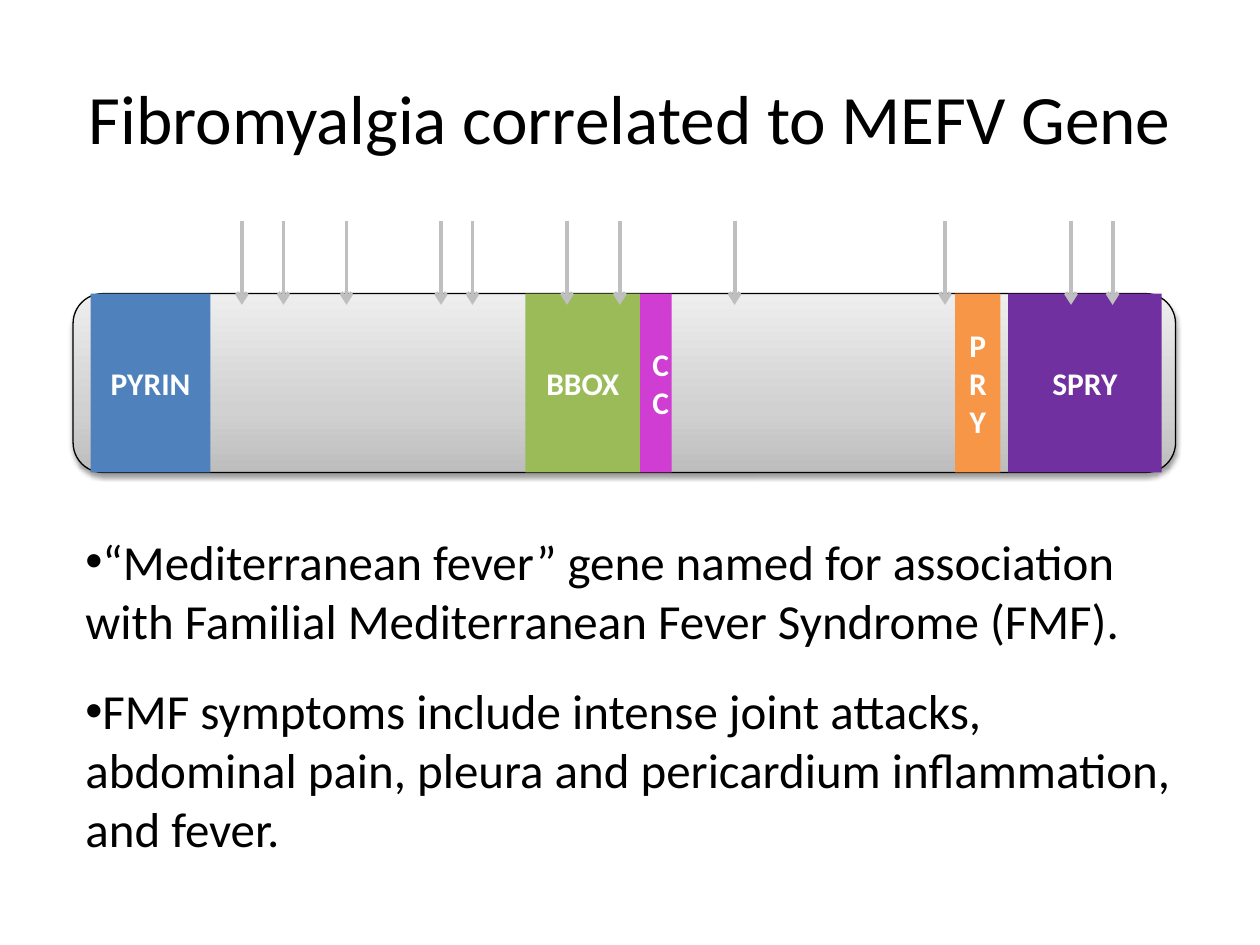
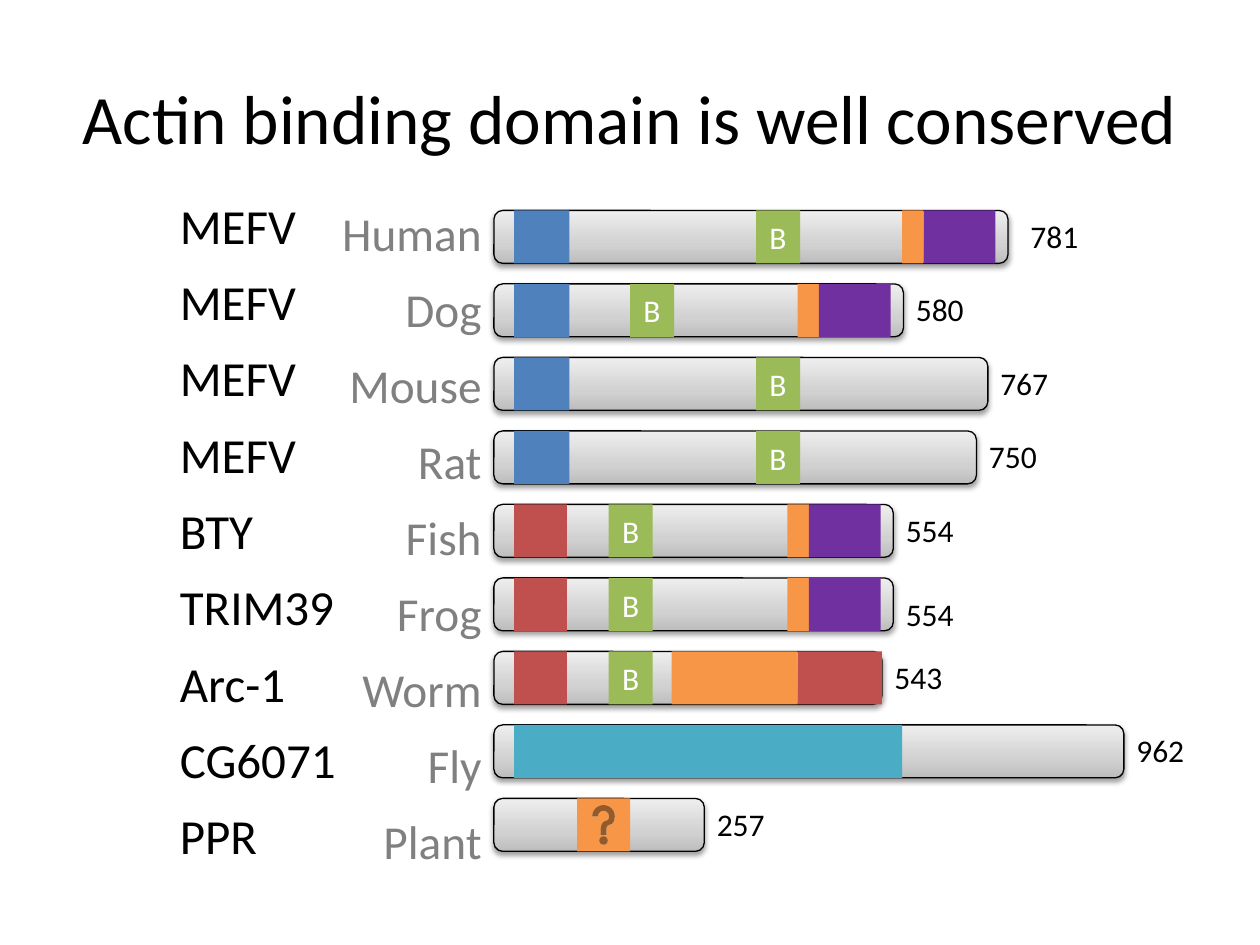
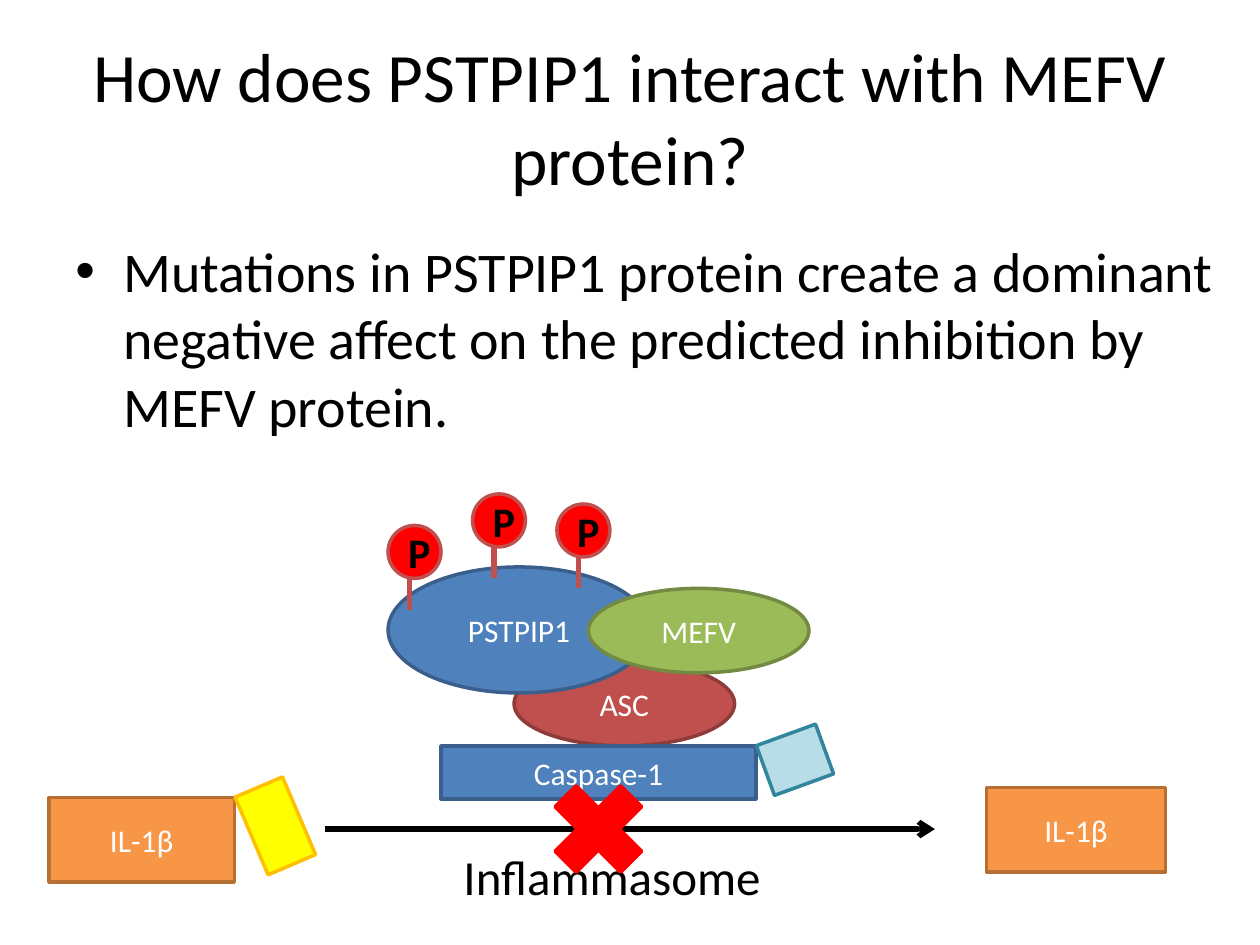
import pptx
import pptx.dml.color
import pptx.enum.shapes
import pptx.enum.text
import pptx.oxml
import pptx.oxml.ns
import pptx.util

Inches = pptx.util.Inches
Pt = pptx.util.Pt
SHAPES = pptx.enum.shapes.MSO_SHAPE
ALIGN = pptx.enum.text.PP_ALIGN
MIDDLE = pptx.enum.text.MSO_ANCHOR.MIDDLE
GROW = pptx.enum.text.MSO_AUTO_SIZE.SHAPE_TO_FIT_TEXT

FONT = "Calibri"
BLACK, WHITE, GRAY, SILVER = "000000", "FFFFFF", "808080", "BFBFBF"
BLUE, GREEN, ORANGE, PURPLE = "4F81BD", "9BBB59", "F79646", "7030A0"
RED, BRIGHT_RED, MAGENTA, TEAL = "C0504D", "FF0000", "CF3DD2", "4BACC6"
TITLE_BOX = (0.5, 0.3, 9, 1.25)
BAR_STOPS = ((0, "BDBDBD"), (35, "D1D1D1"), (100, "EEEEEE"))

MUTATIONS = (1.92, 2.25, 2.75, 3.5, 3.75, 4.5, 4.92, 5.83, 7.5, 8.5, 8.83)
GENE_DOMAINS = (
    ("PYRIN", 0.14, 0.95, BLUE),
    ("BBOX", 3.59, 0.91, GREEN),
    ("PRY", 7, 0.36, ORANGE),
    ("SPRY", 7.42, 1.22, PURPLE),
    ("CC", 4.5, 0.25, MAGENTA),
)
FACTS = (
    "“Mediterranean fever” gene named for association with Familial Mediterranean Fever Syndrome (FMF).",
    "FMF symptoms include intense joint attacks, abdominal pain, pleura and pericardium inflammation, and fever.",
)

PYRIN = ("", 0.16, 0.44, BLUE)
TRIM = ("", 0.16, 0.42, RED)


def b_box(offset):
    """Return a B-box domain at an offset along its bar."""
    return ("B", offset, 0.35, GREEN)


def actin_binding(length):
    """Return the PRY and SPRY domains that close a bar of this length."""
    return ("", length - 0.84, 0.17, ORANGE), ("", length - 0.67, 0.57, PURPLE)


ORTHOLOGS = (
    ("MEFV", "Human", "781", 4.08, (PYRIN, b_box(2.08), *actin_binding(4.08))),
    ("MEFV", "Dog", "580", 3.25, (PYRIN, b_box(1.08), *actin_binding(3.25))),
    ("MEFV", "Mouse", "767", 3.92, (PYRIN, b_box(2.08))),
    ("MEFV", "Rat", "750", 3.83, (PYRIN, b_box(2.08))),
    ("BTY", "Fish", "554", 3.17, (TRIM, b_box(0.91), *actin_binding(3.17))),
    ("TRIM39", "Frog", "554", 3.17, (TRIM, b_box(0.91), *actin_binding(3.17))),
    ("Arc-1", "Worm", "543", 3.08,
     (TRIM, b_box(0.91), ("", 1.41, 1, ORANGE), ("", 2.41, 0.67, RED))),
    ("CG6071", "Fly", "962", 5, (("", 0.16, 3.08, TEAL),)),
    ("PPR", "Plant", "257", 1.67, ()),
)
LABEL_SHIFTS = {"Human": (0.08, 0), "Frog": (0, 0.09)}
ROW_HEIGHT, ROW_PITCH = 0.42, 7 / 12


def color(value):
    """Turn a hex string into a colour."""
    return pptx.dml.color.RGBColor.from_string(value)


def set_values(target, values):
    """Set each attribute named in a dict."""
    for name, value in values.items():
        setattr(target, name, value)


def add_xml(parent, markup):
    """Append a DrawingML element to a parent and return it."""
    element = pptx.oxml.parse_xml(
        markup.replace(" ", f' {pptx.oxml.ns.nsdecls("a")} ', 1))
    parent.append(element)
    return element


def write(frame, texts, size, hue=BLACK, bold=False, **paragraph_values):
    """Fill a text frame with one paragraph per text."""
    frame.word_wrap = True
    for index, text in enumerate(texts):
        paragraph = frame.paragraphs[0] if index == 0 else frame.add_paragraph()
        set_values(paragraph, paragraph_values)
        run = paragraph.add_run()
        run.text = text
        set_values(run.font, {"name": FONT, "size": Pt(size), "bold": bold})
        run.font.color.rgb = color(hue)


def add_text(slide, box, texts, size, hue=BLACK, frame_values=None, **paragraph_values):
    """Add a text box and return its frame."""
    frame = slide.shapes.add_textbox(*map(Inches, box)).text_frame
    write(frame, texts, size, hue, **paragraph_values)
    set_values(frame, frame_values or {})
    return frame


def add_bullets(frame, indent=0):
    """Put a round bullet before every paragraph, with a hanging indent."""
    for paragraph in frame.paragraphs:
        properties = paragraph._p.get_or_add_pPr()
        properties.set("marL", str(Inches(indent)))
        properties.set("indent", str(-Inches(indent)))
        add_xml(properties, '<a:buFont typeface="Arial"/>')
        add_xml(properties, '<a:buChar char="•"/>')


def add_title(slide, text):
    """Add the centred slide title."""
    add_text(slide, TITLE_BOX, [text], 39.6, alignment=ALIGN.CENTER,
             frame_values={"vertical_anchor": MIDDLE})


def add_block(slide, kind, box, fill, line=None, text="", size=18, hue=WHITE,
              bold=False, rotation=0):
    """Add a flat shape with an optional outline and centred text."""
    shape = slide.shapes.add_shape(kind, *map(Inches, box))
    shape.shadow.inherit = False
    shape.rotation = rotation
    shape.fill.solid()
    shape.fill.fore_color.rgb = color(fill)
    if line:
        shape.line.color.rgb = color(line)
        shape.line.width = Pt(2)
    else:
        shape.line.fill.background()
    if text:
        write(shape.text_frame, [text], size, hue, bold, alignment=ALIGN.CENTER)
        shape.text_frame.vertical_anchor = MIDDLE
    return shape


def add_line(slide, start, end, hue, width, arrow=False):
    """Add a straight line, with an arrowhead at its end if asked."""
    connector = slide.shapes.add_connector(
        pptx.enum.shapes.MSO_CONNECTOR.STRAIGHT, *map(Inches, (*start, *end)))
    connector.line.color.rgb = color(hue)
    connector.line.width = Pt(width)
    if arrow:
        add_xml(connector.line._get_or_add_ln(), '<a:tailEnd type="arrow"/>')
    add_xml(connector._element.spPr, "<a:effectLst />")


def add_protein(slide, box, domains):
    """Add a shaded protein bar with its domains placed along it."""
    left, top, width, height = box
    bar = slide.shapes.add_shape(SHAPES.ROUNDED_RECTANGLE, *map(Inches, box))
    bar.line.color.rgb = color(BLACK)
    bar.line.width = Pt(0.75)
    stops = "".join(f'<a:gs pos="{position * 1000}"><a:srgbClr val="{hue}"/></a:gs>'
                    for position, hue in BAR_STOPS)
    properties = bar._element.spPr
    gradient = add_xml(properties, f'<a:gradFill rotWithShape="1"><a:gsLst>{stops}</a:gsLst>'
                                   '<a:lin ang="16200000" scaled="0"/></a:gradFill>')
    properties.find(pptx.oxml.ns.qn("a:ln")).addprevious(gradient)
    add_xml(properties, f'<a:effectLst ><a:outerShdw blurRad="{Pt(3.1)}" dist="{Pt(1.6)}" '
                        'dir="5400000" rotWithShape="0"><a:srgbClr val="000000">'
                        '<a:alpha val="38000"/></a:srgbClr></a:outerShdw></a:effectLst>')
    for text, offset, length, fill in domains:
        add_block(slide, SHAPES.RECTANGLE, (left + offset, top, length, height), fill,
                  text=text, bold=len(text) > 1)


def add_gene_map(slide, box):
    """Draw the gene bar and the arrows that mark its mutations."""
    add_protein(slide, box, GENE_DOMAINS)
    top = box[1]
    for position in MUTATIONS:
        add_line(slide, (position, top - 0.58), (position, top + 0.09), SILVER, 2.25, True)


def add_ortholog_chart(slide, left, top):
    """Draw one protein bar per species with names and lengths."""
    genes, species = zip(*(row[:2] for row in ORTHOLOGS))
    add_text(slide, (left - 2.42, top - 0.25, 2.42, 6.08), species, 27, GRAY,
             alignment=ALIGN.RIGHT, line_spacing=1.34)
    add_text(slide, (left - 2.59, top - 0.17, 2.67, 6.25), genes, 28,
             frame_values={"auto_size": GROW}, space_before=Pt(10))
    for index, (_, name, residues, length, domains) in enumerate(ORTHOLOGS):
        row_top = top + index * ROW_PITCH
        add_protein(slide, (left, row_top, length, ROW_HEIGHT), domains)
        shift_x, shift_y = LABEL_SHIFTS.get(name, (0, 0))
        add_text(slide, (left + length + shift_x, row_top + shift_y, 0.75, 0.4),
                 [residues], 18, frame_values={"auto_size": GROW})
    add_block(slide, SHAPES.ACTION_BUTTON_HELP,
              (left + 0.66, row_top, ROW_HEIGHT, ROW_HEIGHT), ORANGE)


def add_phosphate(slide, left, top):
    """Draw a phosphate group on its stem."""
    add_line(slide, (left + 0.17, top + 0.42), (left + 0.17, top + 0.67), RED, 3)
    add_block(slide, SHAPES.OVAL, (left, top, 0.42, 0.42), BRIGHT_RED, RED, "P", 24, BLACK, True)


def add_pathway(slide, left, top):
    """Draw the blocked inflammasome pathway."""
    def place(kind, x, y, width, height, *style, **options):
        """Add a block relative to the pathway corner."""
        add_block(slide, kind, (left + x, top + y, width, height), *style, **options)

    add_text(slide, (left + 3.19, top + 2.75, 2.92, 0.57), ["Inflammasome"], 28,
             frame_values={"auto_size": GROW})
    place(SHAPES.OVAL, 3.69, 1.33, 1.75, 0.67, RED, "8E3B39", "ASC")
    place(SHAPES.RECTANGLE, 3.11, 2, 2.5, 0.42, BLUE, "3A5F8C", "Caspase-1")
    place(SHAPES.RECTANGLE, 5.67, 1.9, 0.5, 0.42, "B7DEE8", "31859C", rotation=340)
    add_line(slide, (left + 2.19, top + 2.66), (left + 7.03, top + 2.66), BLACK, 3, True)
    place(SHAPES.RECTANGLE, 0, 2.41, 1.47, 0.67, ORANGE, "B76F34", "IL-1β")
    place(SHAPES.RECTANGLE, 1.59, 2.3, 0.41, 0.67, "FFFF00", "FFC000", rotation=336.9)
    place(SHAPES.RECTANGLE, 7.44, 2.33, 1.42, 0.67, ORANGE, "B76F34", "IL-1β")
    place(SHAPES.OVAL, 2.69, 0.58, 2.08, 1, BLUE, "3A5F8C", "PSTPIP1")
    for x, y in ((4.03, 0.08), (3.36, 0), (2.69, 0.25)):
        add_phosphate(slide, left + x, top + y)
    place(SHAPES.OVAL, 4.28, 0.75, 1.75, 0.67, GREEN, "738A42", "MEFV")
    place(SHAPES.MATH_MULTIPLY, 3.86, 2.16, 1, 1, BRIGHT_RED, BRIGHT_RED)


def build_gene_slide(slide):
    """Build the gene map slide."""
    add_title(slide, "Fibromyalgia correlated to MEFV Gene")
    add_gene_map(slide, (0.58, 2.33, 8.75, 1.42))
    facts = add_text(slide, (0.58, 4.17, 8.83, 2.71), FACTS, 28,
                     frame_values={"auto_size": GROW})
    facts.paragraphs[0].space_after = Pt(18)
    add_bullets(facts)


def build_ortholog_slide(slide):
    """Build the species comparison slide."""
    add_title(slide, "Actin binding domain is well conserved")
    add_ortholog_chart(slide, 3.92, 1.67)


def build_pathway_slide(slide):
    """Build the protein interaction slide."""
    add_title(slide, "How does PSTPIP1 interact with MEFV protein?")
    statement = add_text(
        slide, (0.5, 1.83, 9.5, 1.75),
        ["Mutations in PSTPIP1 protein create a dominant negative affect on the "
         "predicted inhibition by MEFV protein."], 32, space_before=Pt(6.4))
    add_bullets(statement, 0.38)
    add_pathway(slide, 0.39, 3.92)


def main():
    """Build and save the presentation."""
    presentation = pptx.Presentation()
    set_values(presentation, {"slide_width": Inches(10), "slide_height": Inches(7.5)})
    for build in (build_gene_slide, build_ortholog_slide, build_pathway_slide):
        build(presentation.slides.add_slide(presentation.slide_layouts[6]))
    presentation.save("out.pptx")


if __name__ == "__main__":
    main()
